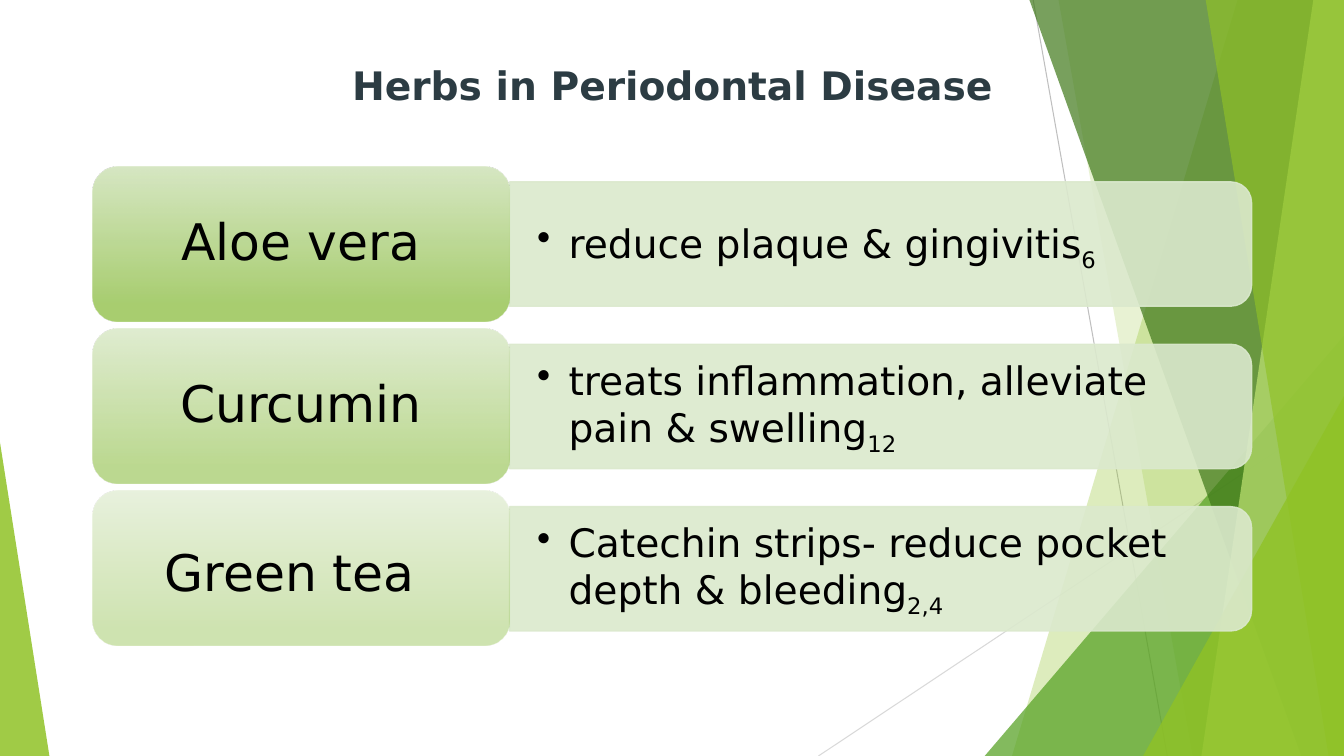
"""Build the slide on herbs in periodontal disease."""
import pptx
import pptx.util
import pptx.dml.color
import pptx.enum.shapes
import pptx.enum.text
import pptx.oxml.ns
import lxml.etree

Pt = pptx.util.Pt
RGB = pptx.dml.color.RGBColor.from_string
qn = pptx.oxml.ns.qn
KIND = pptx.enum.shapes.MSO_SHAPE
ALIGN = pptx.enum.text.PP_ALIGN
ANCHOR = pptx.enum.text.MSO_ANCHOR
FONT = "DejaVu Sans"
COLORS = {
    "lime": "90C226", "green": "54A021", "dark": "3F7819", "pale": "C0E474",
    "bar": "DBE9CD", "light": "D3E5BE", "deep": "A0C962",
    "title": "2C3C43", "text": "000000", "gray": "BFBFBF", "silver": "D9D9D9",
}
WIDE, HIGH = 960, 540

deck = pptx.Presentation()
deck.slide_width, deck.slide_height = Pt(WIDE), Pt(HIGH)
slide = deck.slides.add_slide(deck.slide_layouts[5])
shapes = slide.shapes


def fade(part, alpha):
    """Set the opacity, in percent, of every colour in a part."""
    for color in part.iter(qn("a:srgbClr")):
        node = lxml.etree.SubElement(color, qn("a:alpha"))
        node.set("val", str(alpha * 1000))


def write(box, runs, color="text", bold=False):
    """Add runs of text, size and baseline to the first paragraph."""
    para = box.text_frame.paragraphs[0]
    for text, size, base in runs:
        run = para.add_run()
        run.text = text
        run.font.name, run.font.size, run.font.bold = FONT, Pt(size), bold
        run.font.color.rgb = RGB(COLORS[color])
        if base:
            run.font._element.set("baseline", str(base * 1000))
    return para


rays = [
    (738, 0, 833.8, HIGH, "gray"),
    (WIDE, 290.2, 584.6, HIGH, "silver"),
]
for x1, y1, x2, y2, color in rays:
    ray = shapes.add_connector(
        pptx.enum.shapes.MSO_CONNECTOR.STRAIGHT, Pt(x1), Pt(y1), Pt(x2), Pt(y2))
    ray.line.color.rgb = RGB(COLORS[color])
    ray.line.width = Pt(0.75)
    lxml.etree.SubElement(ray._element.spPr, qn("a:effectLst"))

facets = [
    ("band", (884.2, 722.9), "lime", 30),
    ("band", (756, 851.8), "lime", 20),
    ("peak", (703.4, 239.8, 256.6, 1), "green", 72),
    ("band", (735.1, 929.5), "dark", 70),
    ("band", (938.2, 858.2), "pale", 70),
    ("band", (861.1, 949), "lime", 65),
    ("peak", (816.5, 283, 143.5, 1), "lime", 80),
    ("peak", (0, 316.1, 35.3, 0), "lime", 85),
]
for kind, place, color, alpha in facets:
    if kind == "band":
        top, foot = place
        pen = shapes.build_freeform(Pt(top), Pt(-0.7))
        pen.add_line_segments(
            [(Pt(WIDE), Pt(-0.7)), (Pt(WIDE), Pt(HIGH)), (Pt(foot), Pt(HIGH))])
        facet = pen.convert_to_shape()
    else:
        left, top, width, tip = place
        facet = shapes.add_shape(
            KIND.ISOSCELES_TRIANGLE, Pt(left), Pt(top), Pt(width), Pt(HIGH - top))
        facet.adjustments[0] = tip
    facet.shadow.inherit = False
    facet.fill.solid()
    facet.fill.fore_color.rgb = RGB(COLORS[color])
    facet.line.fill.background()
    fade(facet._element.spPr, alpha)

title = shapes.title
title.left, title.top, title.width, title.height = Pt(141.8), Pt(40.3), Pt(676.8), Pt(103.7)
title.text_frame.vertical_anchor = ANCHOR.TOP
title.text_frame.word_wrap = True
write(title, [("Herbs in Periodontal Disease", 28, 0)], "title", True).alignment = ALIGN.CENTER
shapes._spTree.append(title._element)

herbs = [
    ([("Aloe vera", 36, 0)], "reduce plaque & gingivitis", "6", 90),
    ([("Curcumin", 36, 0)], "treats inflammation, alleviate pain & swelling", "12", 70),
    ([("Green tea", 36, 0), (" ", 51, 0)],
     "Catechin strips- reduce pocket depth & bleeding", "2,4", 50),
]
for row, (name, effect, source, alpha) in enumerate(herbs):
    top = 118.8 + row * 116

    bar = shapes.add_shape(
        KIND.ROUND_2_SAME_RECTANGLE, Pt(584.6), Pt(top - 209.5), Pt(88.8), Pt(530))
    bar.rotation = 90
    bar.shadow.inherit = False
    bar.fill.solid()
    bar.fill.fore_color.rgb = bar.line.color.rgb = RGB(COLORS["bar"])
    bar.line.width = Pt(1)
    fade(bar._element.spPr, 90)

    label = shapes.add_shape(KIND.ROUNDED_RECTANGLE, Pt(66.2), Pt(top), Pt(298), Pt(110.6))
    label.shadow.inherit = False
    label.line.fill.background()
    label.fill.gradient()
    label.fill.gradient_angle = 270
    for stop, spot, color in zip(label.fill.gradient_stops, (0, 0.88), ("light", "deep")):
        stop.position = spot
        stop.color.rgb = RGB(COLORS[color])
    fade(label._element.spPr, alpha)

    texts = [
        (364.3, top + 15.8, 525.6, 79.9, 19.4, 10,
         [(effect, 28, 0), (source, 28, -25)], True),
        (71.3, top + 5.6, 287.3, 99.4, 10.8, 5, name, False),
    ]
    for left, head, width, height, side, edge, runs, listed in texts:
        box = shapes.add_textbox(Pt(left), Pt(head), Pt(width), Pt(height))
        frame = box.text_frame
        frame.word_wrap = True
        frame.vertical_anchor = ANCHOR.MIDDLE
        frame.margin_left = frame.margin_right = Pt(side)
        frame.margin_top = frame.margin_bottom = Pt(edge)
        para = write(box, runs)
        para.line_spacing = 0.9
        if listed:
            para.level = 1
            props = para._p.get_or_add_pPr()
            props.set("marL", str(Pt(22.5)))
            props.set("indent", str(Pt(-22.5)))
            lxml.etree.SubElement(props, qn("a:buChar")).set("char", "•")
        else:
            para.alignment = ALIGN.CENTER

deck.save("out.pptx")
